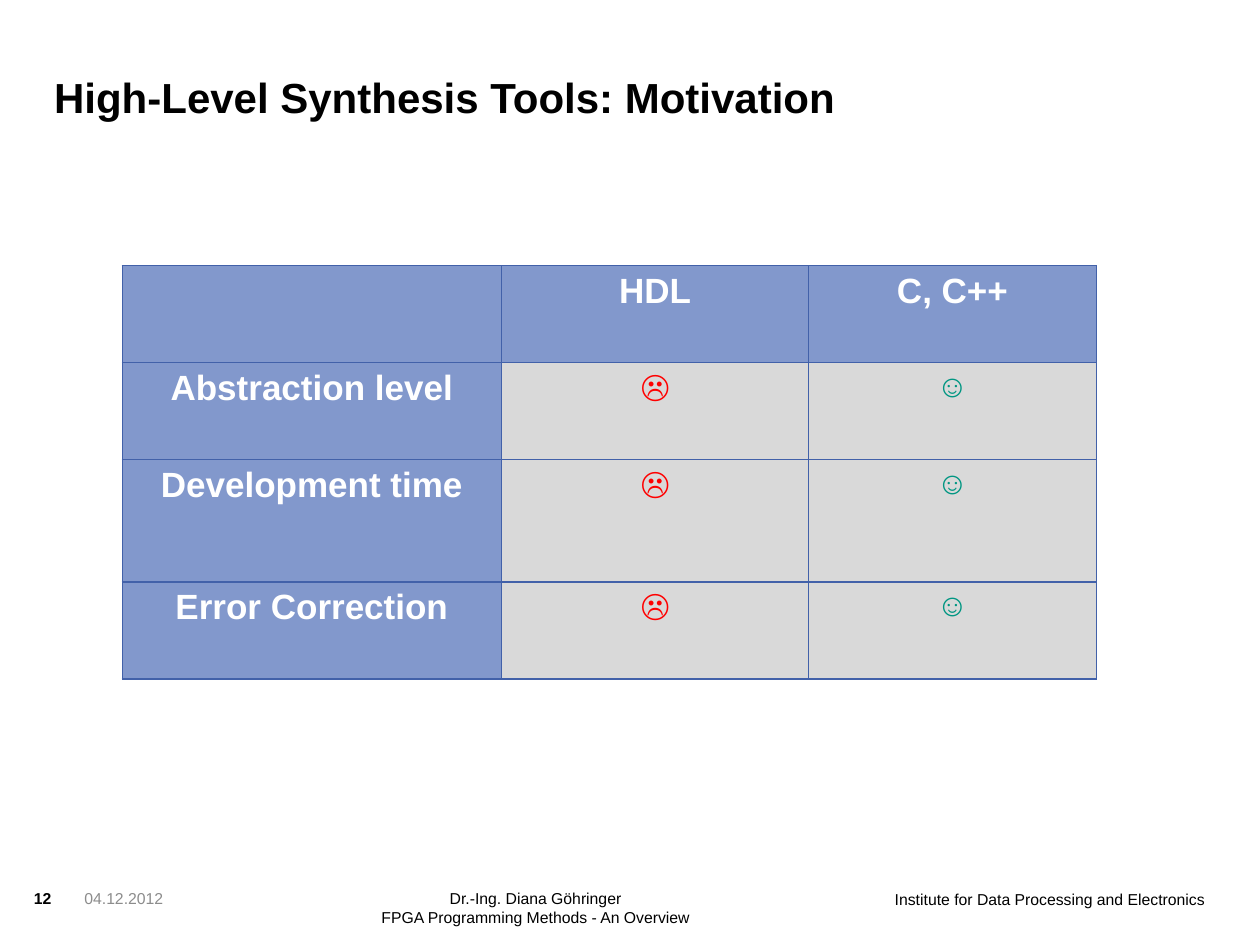
"""Build the slide that motivates high-level synthesis tools."""

from dataclasses import dataclass

from lxml.etree import SubElement
from pptx import Presentation
from pptx.dml.color import RGBColor
from pptx.enum.text import MSO_ANCHOR, PP_ALIGN
from pptx.oxml.ns import qn
from pptx.slide import Slide
from pptx.table import _Cell
from pptx.text.text import _Paragraph
from pptx.util import Inches, Pt


@dataclass(frozen=True)
class Theme:
    font: str = "Arial"
    black: str = "000000"
    white: str = "FFFFFF"
    muted: str = "8C8C8C"
    heading_fill: str = "8298CC"
    rating_fill: str = "D9D9D9"
    border: str = "4261A9"
    bad: str = "FF0000"
    good: str = "009682"
    title_size: float = 24
    heading_size: float = 20
    rating_size: float = 18
    footer_size: float = 9
    border_width: float = 0.75


THEME = Theme()


@dataclass(frozen=True)
class Style:
    size: float
    color: str
    bold: bool = False


@dataclass(frozen=True)
class Label:
    lines: tuple[str, ...]
    left: float
    top: float
    width: float
    height: float
    style: Style
    align: PP_ALIGN = PP_ALIGN.LEFT
    anchor: MSO_ANCHOR = MSO_ANCHOR.TOP


@dataclass(frozen=True)
class CellLook:
    fill: str
    style: Style


TITLE = Style(THEME.title_size, THEME.black, True)
FOOTER = Style(THEME.footer_size, THEME.black)
HEADING = CellLook(
    THEME.heading_fill, Style(THEME.heading_size, THEME.white, True)
)
RATINGS = {
    "☹": CellLook(THEME.rating_fill, Style(THEME.rating_size, THEME.bad, True)),
    "☺": CellLook(THEME.rating_fill, Style(THEME.rating_size, THEME.good, True)),
}

LABELS = (
    Label(("High-Level Synthesis Tools: Motivation",),
          0.43, 0.36, 7.56, 0.61, TITLE, anchor=MSO_ANCHOR.BOTTOM),
    Label(("12",), 0.27, 7.05, 0.36, 0.24,
          Style(THEME.footer_size, THEME.black, True)),
    Label(("04.12.2012",), 0.67, 7.05, 1.14, 0.39,
          Style(THEME.footer_size, THEME.muted)),
    Label(("Dr.-Ing. Diana Göhringer", "FPGA Programming Methods - An Overview"),
          1.61, 7.05, 5.28, 0.39, FOOTER, PP_ALIGN.CENTER),
    Label(("Institute for Data Processing and Electronics",),
          6.57, 7.06, 2.99, 0.39, FOOTER, PP_ALIGN.RIGHT),
)

CRITERIA = ("Abstraction level", "Development time", "Error Correction")
COMPARISON = (
    ("", "HDL", "C, C++"),
    *((criterion, "☹", "☺") for criterion in CRITERIA),
)
COLUMN_WIDTHS = (3.01, 2.44, 2.28)
ROW_HEIGHTS = (0.77, 0.77, 0.97, 0.77)


def write(paragraph: _Paragraph, text: str, style: Style, align: PP_ALIGN) -> None:
    paragraph.alignment = align
    run = paragraph.add_run()
    run.text = text
    run.font.name = THEME.font
    run.font.size = Pt(style.size)
    run.font.bold = style.bold
    run.font.color.rgb = RGBColor.from_string(style.color)


def add_label(slide: Slide, label: Label) -> None:
    shape = slide.shapes.add_textbox(
        Inches(label.left), Inches(label.top),
        Inches(label.width), Inches(label.height),
    )
    frame = shape.text_frame
    frame.word_wrap = True
    frame.vertical_anchor = label.anchor
    frame.margin_left = frame.margin_right = Inches(0)
    frame.margin_top = frame.margin_bottom = Inches(0)
    for index, line in enumerate(label.lines):
        paragraph = frame.add_paragraph() if index else frame.paragraphs[0]
        write(paragraph, line, label.style, label.align)


def add_borders(cell: _Cell) -> None:
    properties = cell._tc.get_or_add_tcPr()
    for position, side in enumerate(("lnL", "lnR", "lnT", "lnB")):
        line = properties.makeelement(
            qn(f"a:{side}"), {"w": str(Pt(THEME.border_width))}
        )
        fill = SubElement(line, qn("a:solidFill"))
        SubElement(fill, qn("a:srgbClr"), val=THEME.border)
        properties.insert(position, line)


def fill_cell(cell: _Cell, text: str) -> None:
    look = RATINGS.get(text, HEADING)
    cell.fill.solid()
    cell.fill.fore_color.rgb = RGBColor.from_string(look.fill)
    add_borders(cell)
    if text:
        paragraph = cell.text_frame.paragraphs[0]
        write(paragraph, text, look.style, PP_ALIGN.CENTER)


def add_comparison(slide: Slide) -> None:
    table = slide.shapes.add_table(
        len(ROW_HEIGHTS), len(COLUMN_WIDTHS), Inches(0.97), Inches(2.11),
        Inches(sum(COLUMN_WIDTHS)), Inches(sum(ROW_HEIGHTS)),
    ).table
    for column, width in zip(table.columns, COLUMN_WIDTHS):
        column.width = Inches(width)
    for row, height, texts in zip(table.rows, ROW_HEIGHTS, COMPARISON):
        row.height = Inches(height)
        for cell, text in zip(row.cells, texts):
            fill_cell(cell, text)


def main() -> None:
    presentation = Presentation()
    presentation.slide_width = Inches(10)
    presentation.slide_height = Inches(7.5)
    slide = presentation.slides.add_slide(presentation.slide_layouts[6])
    add_comparison(slide)
    for label in LABELS:
        add_label(slide, label)
    presentation.save("out.pptx")


if __name__ == "__main__":
    main()
